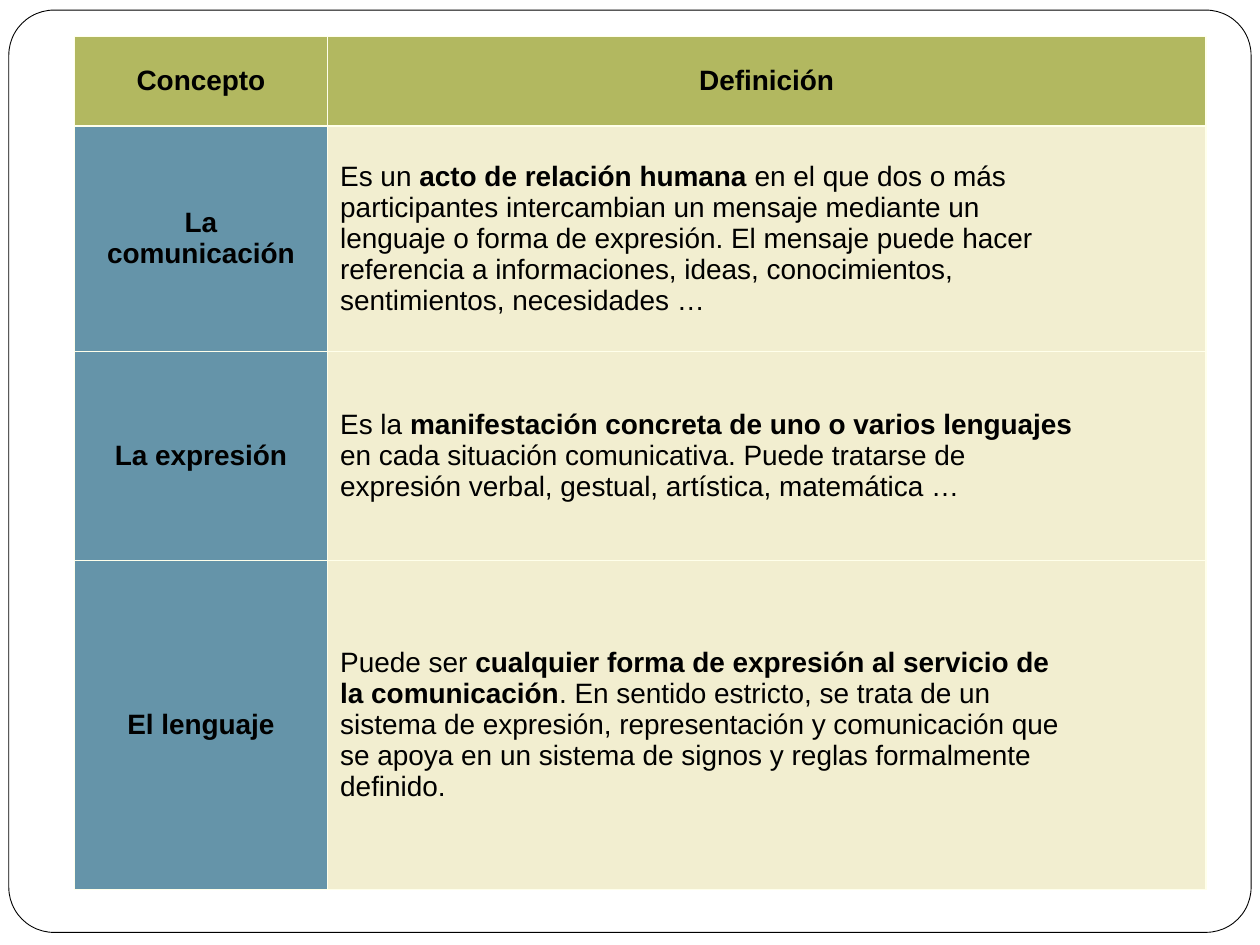
from lxml.etree import SubElement
from pptx import Presentation
from pptx.dml.color import RGBColor
from pptx.enum.shapes import MSO_SHAPE
from pptx.enum.text import MSO_ANCHOR, PP_ALIGN
from pptx.oxml.ns import qn
from pptx.util import Inches, Pt

WIDE, HIGH = 10, 7.5
COLS = [2.01, 6.97]
ROWS = [0.71, 1.79, 1.66, 2.61]
OLIVE, BLUE, CREAM, IVORY = "B2B860", "6594A9", "F2EED0", "FFFFEB"
INDENT = Inches(0.38)

# Each line is a paragraph; asterisks enclose bold words
CELLS = [
    ("*Concepto*", "*Definición*"),
    ("*La*\n*comunicación*",
     "Es un* acto de relación humana* en el que dos o más\n"
     "participantes intercambian un mensaje mediante un\n"
     "lenguaje o forma de expresión. El mensaje puede hacer\n"
     "referencia a informaciones, ideas, conocimientos,\n"
     "sentimientos, necesidades …"),
    ("*La expresión*",
     "Es la* manifestación concreta de uno o varios lenguajes*\n"
     "en cada situación comunicativa. Puede tratarse de\n"
     "expresión verbal, gestual, artística, matemática …"),
    ("*El lenguaje*",
     "Puede ser *cualquier forma de expresión al servicio de*\n"
     "*la comunicación*. En sentido estricto, se trata de un\n"
     "sistema de expresión, representación y comunicación que\n"
     "se apoya en un sistema de signos y reglas formalmente\n"
     "definido."),
]


def color(code):
    return RGBColor.from_string(code)


def add_frame(slide, box):
    frame = slide.shapes.add_shape(MSO_SHAPE.ROUNDED_RECTANGLE, *map(Inches, box))
    frame.adjustments[0] = 0.049
    frame.shadow.inherit = False
    frame.fill.solid()
    frame.fill.fore_color.rgb = color("FFFFFF")
    frame.line.color.rgb = color("000000")
    frame.line.width = Pt(0.5)


def add_edges(cell):
    props = cell._tc.get_or_add_tcPr()
    for side in ("lnL", "lnR", "lnT", "lnB"):
        edge = SubElement(props, qn("a:" + side), w=str(Pt(1)))
        fill = SubElement(edge, qn("a:solidFill"))
        SubElement(fill, qn("a:srgbClr"), val=IVORY)


def fill_text(cell, text, align):
    frame = cell.text_frame
    lines = text.split("\n")
    frame.text = "\n".join(line.replace("*", "") for line in lines)
    for para, line in zip(frame.paragraphs, lines):
        para.text = ""
        para.alignment = align
        props = para._p.get_or_add_pPr()
        props.set("marL", str(INDENT))
        props.set("indent", str(-INDENT))
        for part, words in enumerate(line.split("*")):
            if not words:
                continue
            run = para.add_run()
            run.text = words
            run.font.name = "Arial"
            run.font.size = Pt(16)
            run.font.bold = part % 2 == 1
            run.font.color.rgb = color("000000")


def add_grid(slide, box):
    left, top, width, height = box
    grid = slide.shapes.add_table(len(ROWS), len(COLS), *map(Inches, box)).table
    # Share the box among columns and rows
    for col, size in zip(grid.columns, COLS):
        col.width = Inches(width * size / sum(COLS))
    for row, size in zip(grid.rows, ROWS):
        row.height = Inches(height * size / sum(ROWS))
    # Header row, concept column and definitions
    for r, texts in enumerate(CELLS):
        for c, text in enumerate(texts):
            cell = grid.cell(r, c)
            add_edges(cell)
            cell.fill.solid()
            cell.fill.fore_color.rgb = color(OLIVE if r == 0 else (BLUE, CREAM)[c])
            cell.vertical_anchor = MSO_ANCHOR.MIDDLE
            plain = r > 0 and c > 0
            fill_text(cell, text, PP_ALIGN.JUSTIFY if plain else PP_ALIGN.CENTER)


def main():
    deck = Presentation()
    deck.slide_width, deck.slide_height = Inches(WIDE), Inches(HIGH)
    slide = deck.slides.add_slide(deck.slide_layouts[6])
    add_frame(slide, (0.07, 0.08, 9.86, 7.32))
    add_grid(slide, (0.59, 0.29, sum(COLS), sum(ROWS)))
    deck.save("out.pptx")


if __name__ == "__main__":
    main()
